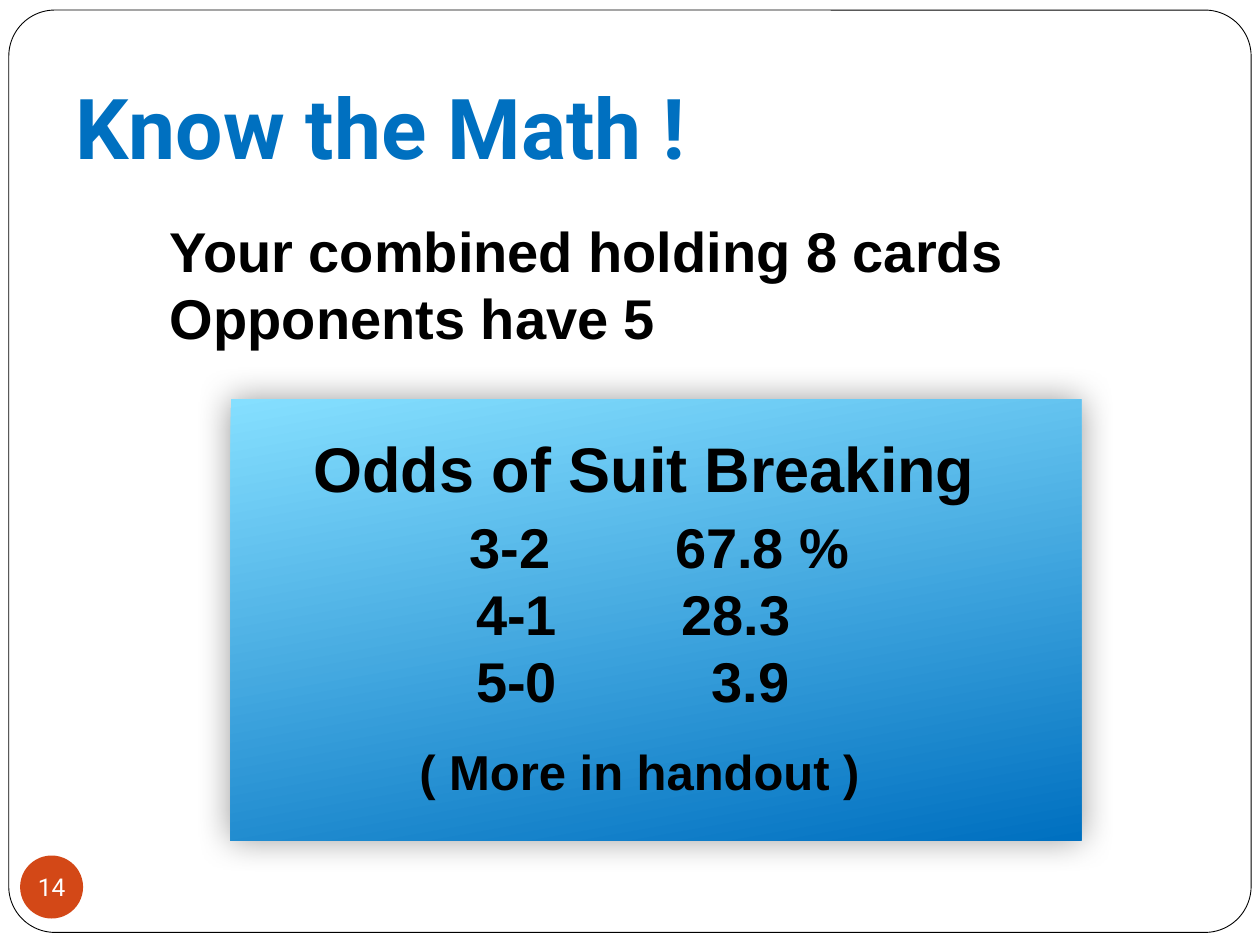
from lxml import etree
from pptx import Presentation
from pptx.dml.color import RGBColor
from pptx.enum import shapes, text
from pptx.oxml import ns
from pptx.util import Inches, Pt

COLORS = {"paper": "FFFFFF", "ink": "000000", "title": "0070C0",
          "light": "85DFFF", "deep": "0070C0", "badge": "D34817"}
ODDS = [("3-2", "67.8 %", 1.8, 3.43, 4),
        ("4-1", "28.3", 1.85, 3.48, 0),
        ("5-0", "3.9", 1.85, 3.72, 0)]


def color(name):
    """Return the named colour."""
    return RGBColor.from_string(COLORS[name])


def child(parent, tag, **attributes):
    """Append a drawing element and return it."""
    return etree.SubElement(parent, ns.qn(tag), attributes)


def add_line(frame, words, size=32, font="Arial", ink="ink", bold=True,
             align=text.PP_ALIGN.LEFT, before=0, tabs=()):
    """Write one formatted paragraph, reusing the empty first one."""
    first = frame.paragraphs[0]
    para = frame.add_paragraph() if first.runs else first
    para.alignment = align
    para.space_before = Pt(before)
    if tabs:
        stops = child(para._p.get_or_add_pPr(), "a:tabLst")
        for stop in tabs:
            child(stops, "a:tab", pos=str(Inches(stop)), algn="l")
    span = para.add_run()
    span.text = words
    span.font.size = Pt(size)
    span.font.name = font
    span.font.bold = bold
    span.font.color.rgb = color(ink)


def set_frame(frame, left=0.1, top=0.05, right=0.1, bottom=0.05,
              anchor=text.MSO_ANCHOR.TOP, wrap=True):
    """Set the insets, anchor and wrapping of a text frame."""
    frame.margin_left, frame.margin_top = Inches(left), Inches(top)
    frame.margin_right, frame.margin_bottom = Inches(right), Inches(bottom)
    frame.vertical_anchor = anchor
    frame.word_wrap = wrap
    return frame


def add_panel(page, kind, box, fill=None):
    """Add a preset shape without outline or shadow."""
    panel = page.shapes.add_shape(kind, *map(Inches, box))
    panel.shadow.inherit = False
    panel.line.fill.background()
    if fill:
        panel.fill.solid()
        panel.fill.fore_color.rgb = color(fill)
    return panel


def add_border(page, box):
    """Draw the rounded page border."""
    border = add_panel(page, shapes.MSO_SHAPE.ROUNDED_RECTANGLE, box, "paper")
    border.adjustments[0] = 0.05
    border.line.color.rgb = color("ink")
    border.line.width = Pt(0.5)


def add_title(page, box):
    """Write the page title at the bottom of its box."""
    title = page.shapes.add_textbox(*map(Inches, box))
    frame = set_frame(title.text_frame, left=0.27, bottom=0.1,
                      anchor=text.MSO_ANCHOR.BOTTOM)
    add_line(frame, "Know the Math !", size=48, font="Roboto", ink="title")


def add_holding(page, box):
    """Write how the cards are divided."""
    holding = page.shapes.add_textbox(*map(Inches, box))
    frame = set_frame(holding.text_frame)
    for words in ("Your combined holding 8 cards", "Opponents have 5"):
        add_line(frame, words)


def add_odds(page, box):
    """Draw the shaded panel with the odds of each break."""
    panel = add_panel(page, shapes.MSO_SHAPE.RECTANGLE, box)
    panel.fill.gradient()
    panel.fill.gradient_angle = 280
    for stop, name in zip(panel.fill.gradient_stops, ("light", "deep")):
        stop.color.rgb = color(name)
    effects = panel._element.spPr.find(ns.qn("a:effectLst"))
    shadow = child(effects, "a:outerShdw", blurRad=str(Pt(20)), dist="0",
                   dir="5400000", rotWithShape="0")
    shade = child(shadow, "a:srgbClr", val=COLORS["ink"])
    child(shade, "a:alpha", val="40000")
    frame = set_frame(panel.text_frame, top=0.24)
    add_line(frame, "\tOdds of Suit Breaking", size=36, tabs=[0.56])
    for split, chance, split_at, chance_at, before in ODDS:
        add_line(frame, f"\t{split}\t{chance}", before=before,
                 tabs=[split_at, chance_at])
    add_line(frame, "\t( More in handout )", size=28, before=16, tabs=[1.4])


def add_page_number(page, box):
    """Draw the round page number."""
    badge = add_panel(page, shapes.MSO_SHAPE.OVAL, box, "badge")
    frame = set_frame(badge.text_frame, 0, 0, 0, 0,
                      anchor=text.MSO_ANCHOR.MIDDLE, wrap=False)
    add_line(frame, "14", size=14, font="Roboto", ink="paper", bold=False,
             align=text.PP_ALIGN.CENTER)


def main():
    """Build and save the deck."""
    deck = Presentation()
    deck.slide_width, deck.slide_height = Inches(10), Inches(7.5)
    page = deck.slides.add_slide(deck.slide_layouts[6])
    add_border(page, (0.07, 0.08, 9.86, 7.32))
    add_title(page, (0.33, 0.32, 9.33, 1.18))
    add_odds(page, (1.83, 3.17, 6.75, 3.5))
    add_holding(page, (1.25, 1.67, 7.75, 1.18))
    add_page_number(page, (0.16, 6.79, 0.5, 0.5))
    deck.save("out.pptx")


if __name__ == "__main__":
    main()
